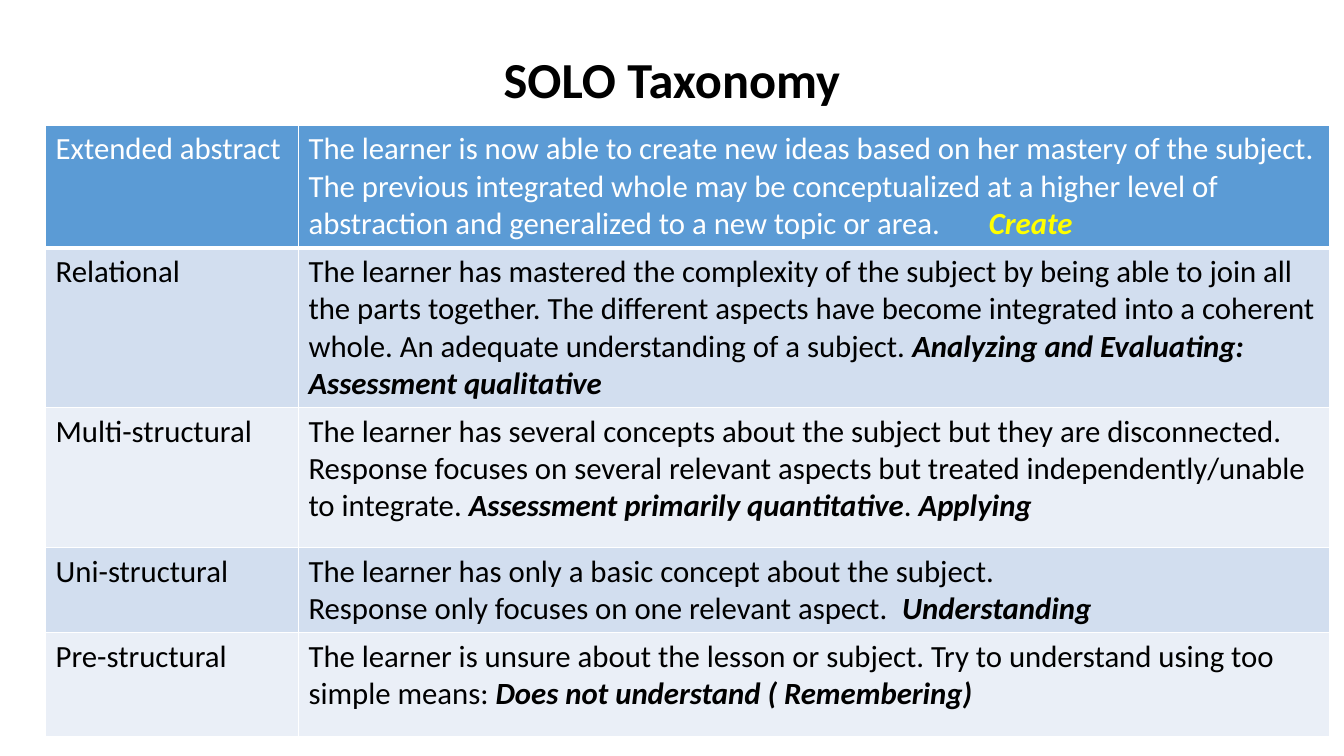
from dataclasses import dataclass

from lxml.etree import SubElement
from pptx import Presentation
from pptx.dml.color import RGBColor
from pptx.enum.text import MSO_ANCHOR, PP_ALIGN
from pptx.oxml.ns import qn
from pptx.util import Pt


@dataclass(frozen=True)
class Theme:
    font: str = "Calibri"
    title_size: int = 36
    body_size: int = 22
    text: str = "000000"
    header_text: str = "FFFFFF"
    highlight: str = "FFFF00"
    border: str = "FFFFFF"
    header_fill: str = "5B9BD5"
    band_fills: tuple = ("EAEFF7", "D2DEEF")


THEME = Theme()
TITLE_BOX = (66, 28.8, 828, 60.5)
TABLE_BOX = (32.6, 89.5, 917.2, 427)
COLUMN_WIDTHS = (180.6, 736.6)
ROW_HEIGHTS = (84.2, 110.2, 100, 58.3, 74.2)
TAB_STOPS = {0: 486, 3: 424}

# Each level has a name and paragraphs of (text, emphasized) pieces.
LEVELS = [
    ("Extended abstract", [[
        ("The learner is now able to create new ideas based on her mastery of the "
         "subject. The previous integrated whole may be conceptualized at a higher "
         "level of abstraction and generalized to a new topic or area.\t", False),
        ("Create", True)]]),
    ("Relational", [[
        ("The learner has mastered the complexity of the subject by being able to "
         "join all the parts together. The different aspects have become integrated "
         "into a coherent whole. An adequate understanding of a subject. ", False),
        ("Analyzing and Evaluating: Assessment qualitative", True)]]),
    ("Multi-structural", [[
        ("The learner has several concepts about the subject but they are "
         "disconnected. Response focuses on several relevant aspects but treated "
         "independently/unable to integrate. ", False),
        ("Assessment primarily quantitative", True),
        (". ", False),
        ("Applying", True)]]),
    ("Uni-structural", [
        [("The learner has only a basic concept about the subject.", False)],
        [("Response only focuses on one relevant aspect.\t", False),
         ("Understanding", True)]]),
    ("Pre-structural", [[
        ("The learner is unsure about the lesson or subject. Try to understand "
         "using too simple means: ", False),
        ("Does not understand ( Remembering)", True)]]),
]


def add_text(paragraph, text, size=THEME.body_size, color=THEME.text,
             bold=False, italic=False):
    run = paragraph.add_run()
    run.text = text
    font = run.font
    font.name, font.size = THEME.font, Pt(size)
    font.bold, font.italic = bold, italic
    font.color.rgb = RGBColor.from_string(color)


def add_tab_stop(paragraph, position):
    properties = paragraph._p.get_or_add_pPr()
    stops = SubElement(properties, qn("a:tabLst"))
    SubElement(stops, qn("a:tab"), pos=str(Pt(position)), algn="l")


def style_cell(cell, fill, top, bottom):
    """Set the cell's fill and its border widths; the sides are 1 pt."""
    properties = cell._tc.get_or_add_tcPr()
    for side, width in (("L", 1), ("R", 1), ("T", top), ("B", bottom)):
        line = SubElement(properties, qn(f"a:ln{side}"), w=str(Pt(width)))
        solid = SubElement(line, qn("a:solidFill"))
        SubElement(solid, qn("a:srgbClr"), val=THEME.border)
    cell.fill.solid()
    cell.fill.fore_color.rgb = RGBColor.from_string(fill)


def build_title(slide, box):
    title = slide.shapes.title
    title.left, title.top, title.width, title.height = map(Pt, box)
    title.text_frame.vertical_anchor = MSO_ANCHOR.MIDDLE
    paragraph = title.text_frame.paragraphs[0]
    paragraph.alignment = PP_ALIGN.CENTER
    paragraph.line_spacing = 0.9
    add_text(paragraph, "SOLO Taxonomy", size=THEME.title_size, bold=True)


def fill_description(cell, paragraphs, tab_stop, color, emphasis_color):
    frame = cell.text_frame
    for index, pieces in enumerate(paragraphs):
        paragraph = frame.add_paragraph() if index else frame.paragraphs[0]
        if tab_stop:
            add_tab_stop(paragraph, tab_stop)
        for text, emphasized in pieces:
            add_text(paragraph, text, bold=emphasized, italic=emphasized,
                     color=emphasis_color if emphasized else color)


def build_levels_table(slide, box):
    table = slide.shapes.add_table(
        len(LEVELS), len(COLUMN_WIDTHS), *map(Pt, box)).table
    for column, width in zip(table.columns, COLUMN_WIDTHS):
        column.width = Pt(width)
    for index, (name, paragraphs) in enumerate(LEVELS):
        table.rows[index].height = Pt(ROW_HEIGHTS[index])
        header = index == 0
        fill = THEME.header_fill if header else THEME.band_fills[index % 2]
        color = THEME.header_text if header else THEME.text
        emphasis_color = THEME.highlight if header else THEME.text
        name_cell, description_cell = table.rows[index].cells
        for cell in (name_cell, description_cell):
            style_cell(cell, fill, top=3 if index == 1 else 1,
                       bottom=3 if header else 1)
        add_text(name_cell.text_frame.paragraphs[0], name, color=color)
        fill_description(description_cell, paragraphs, TAB_STOPS.get(index),
                         color, emphasis_color)


def main():
    presentation = Presentation()
    presentation.slide_width, presentation.slide_height = Pt(960), Pt(540)
    slide = presentation.slides.add_slide(presentation.slide_layouts[5])
    build_title(slide, TITLE_BOX)
    build_levels_table(slide, TABLE_BOX)
    presentation.save("out.pptx")


if __name__ == "__main__":
    main()
